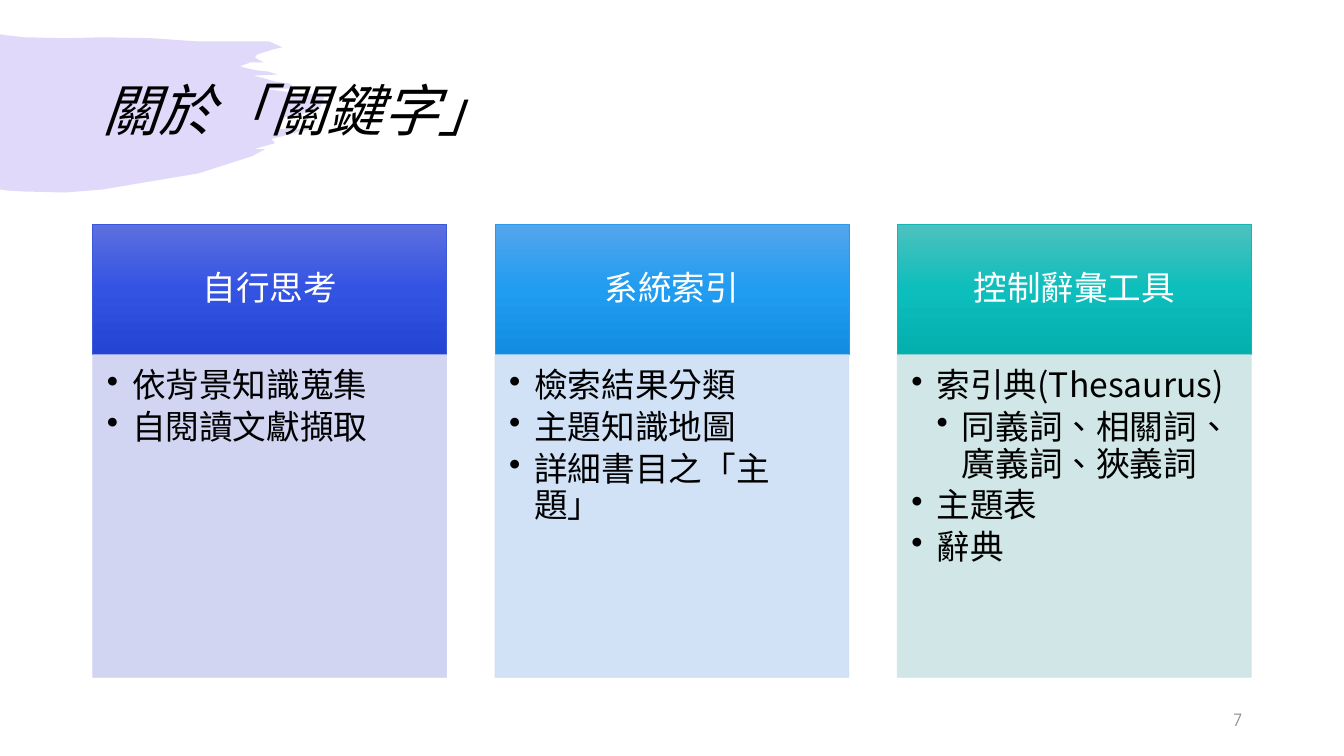
from copy import deepcopy
from dataclasses import dataclass

from lxml.etree import SubElement
from pptx import Presentation
from pptx.dml.color import RGBColor
from pptx.enum.shapes import MSO_SHAPE
from pptx.enum.text import MSO_ANCHOR, PP_ALIGN
from pptx.oxml.ns import qn
from pptx.util import Pt

PX = 9144


@dataclass(frozen=True)
class Theme:
    """Colours, fonts and type sizes of the slide."""
    body_font: str = "Noto Sans CJK SC"
    number_font: str = "TeX Gyre Adventor"
    ink: str = "000000"
    header_ink: str = "FFFFFF"
    number_ink: str = "8C8C8C"
    brush: str = "6C45EA"
    title_size: int = 40
    text_size: int = 24
    number_size: int = 12


@dataclass(frozen=True)
class Topic:
    """One column: its colours, heading and (level, text) points."""
    gradient: tuple
    edge: str
    tint: str
    heading: str
    points: tuple


THEME = Theme()
TOPICS = (
    Topic(("5C6FE0", "3353E3", "2444D3"), "3B58DB", "CED1F1", "自行思考",
          ((1, "依背景知識蒐集"), (1, "自閱讀文獻擷取"))),
    Topic(("53A5EC", "209CF0", "118CE0"), "299AE7", "CDDEF6", "系統索引",
          ((1, "檢索結果分類"), (1, "主題知識地圖"), (1, "詳細書目之「主題」"))),
    Topic(("4CC1BF", "0CBEBC", "03B0AE"), "14B6B4", "CCE5E5", "控制辭彙工具",
          ((1, "索引典(Thesaurus)"), (2, "同義詞、相關詞、廣義詞、狹義詞"),
           (1, "主題表"), (1, "辭典"))),
)
BRUSH_OUTLINE = (
    (0, 0), (6, 1), (25, 3), (66, 4), (102, 3), (151, 4), (194, 7), (248, 7),
    (267, 7), (280, 13), (271, 15), (255, 20), (253, 23), (256, 25), (262, 28),
    (248, 28), (238, 32), (246, 34), (256, 36), (266, 37), (275, 40), (251, 41),
    (263, 44), (273, 47), (280, 48), (288, 49), (290, 51), (287, 54), (284, 54),
    (263, 54), (296, 59), (330, 60), (321, 63), (318, 72), (307, 77), (300, 79),
    (283, 82), (280, 86), (278, 91), (274, 94), (308, 94), (269, 104),
    (273, 108), (252, 114), (263, 114), (250, 121), (197, 138), (102, 154),
    (65, 157), (23, 156), (7, 155), (0, 154),
)


def emu(box):
    """Turn a box in px into EMU."""
    return [length * PX for length in box]


def set_alpha(shape, percent):
    """Make the fill and line colours of a shape translucent."""
    for color in shape._element.spPr.iter(qn("a:srgbClr")):
        SubElement(color, qn("a:alpha"), val=str(percent * 1000))


def style_para(para, font, size, color, italic=None):
    """Set the type of a paragraph, for Latin and Chinese text alike."""
    para.font.name = font
    para.font.size = Pt(size)
    para.font.italic = italic
    para.font.color.rgb = RGBColor.from_string(color)
    properties = para._p.pPr.find(qn("a:defRPr"))
    properties.set("lang", "zh-TW")
    SubElement(properties, qn("a:ea"), typeface=font)


def set_frame(frame, anchor, insets=(10, 5, 10, 5)):
    """Set wrapping, anchor and insets of a text frame."""
    frame.word_wrap = True
    frame.vertical_anchor = anchor
    (frame.margin_left, frame.margin_top,
     frame.margin_right, frame.margin_bottom) = emu(insets)


def add_brush(page, box):
    """Draw the brush stroke behind the title."""
    left, top = emu(box)
    builder = page.shapes.build_freeform(*BRUSH_OUTLINE[0], scale=PX)
    builder.add_line_segments(BRUSH_OUTLINE[1:], close=True)
    brush = builder.convert_to_shape(left, top)
    brush.shadow.inherit = False
    brush.fill.solid()
    brush.fill.fore_color.rgb = RGBColor.from_string(THEME.brush)
    brush.line.fill.background()
    set_alpha(brush, 20)


def add_label(page, box, text, align, font, size, color, italic=None):
    """Write one line of text, centred vertically in its box."""
    frame = page.shapes.add_textbox(*emu(box)).text_frame
    set_frame(frame, MSO_ANCHOR.MIDDLE)
    para = frame.paragraphs[0]
    para.text = text
    para.alignment = align
    para.line_spacing = 0.9
    style_para(para, font, size, color, italic)


def add_panel(page, box, edge):
    """Add a rectangle with a thin outline."""
    panel = page.shapes.add_shape(MSO_SHAPE.RECTANGLE, *emu(box))
    panel.shadow.inherit = False
    panel.line.color.rgb = RGBColor.from_string(edge)
    panel.line.width = Pt(0.5)
    return panel


def add_header(page, box, topic):
    """Add the gradient heading of a column."""
    header = add_panel(page, box, topic.edge)
    header.fill.gradient()
    header.fill.gradient_angle = 270
    stop_list = header._element.spPr.find(".//" + qn("a:gsLst"))
    stop_list.insert(1, deepcopy(stop_list[0]))
    for index, stop in enumerate(header.fill.gradient_stops):
        stop.position = index / 2
        stop.color.rgb = RGBColor.from_string(topic.gradient[index])
    set_frame(header.text_frame, MSO_ANCHOR.MIDDLE, (19, 11, 19, 11))
    para = header.text_frame.paragraphs[0]
    para.text = topic.heading
    para.alignment = PP_ALIGN.CENTER
    para.line_spacing = 0.9
    style_para(para, THEME.body_font, THEME.text_size, THEME.header_ink)


def add_points(page, box, topic):
    """Add the tinted panel with the bulleted points of a column."""
    panel = add_panel(page, box, topic.tint)
    panel.fill.solid()
    panel.fill.fore_color.rgb = RGBColor.from_string(topic.tint)
    set_alpha(panel, 90)
    frame = panel.text_frame
    set_frame(frame, MSO_ANCHOR.TOP, (14, 14, 19, 21))
    for index, (level, text) in enumerate(topic.points):
        para = frame.add_paragraph() if index else frame.paragraphs[0]
        para.text = text
        para.level = level
        para.alignment = PP_ALIGN.LEFT
        para.line_spacing = 0.9
        para.space_after = Pt(4)
        properties = para._p.get_or_add_pPr()
        properties.set("marL", str(25 * level * PX))
        properties.set("indent", str(-25 * PX))
        SubElement(properties, qn("a:buChar"), char="•")
        style_para(para, THEME.body_font, THEME.text_size, THEME.ink)


def add_columns(page, box):
    """Lay out the topics as equal columns with even gaps."""
    left, top, width, height = box
    column_width, header_height = 351, 129
    pitch = (width - column_width) // (len(TOPICS) - 1)
    for index, topic in enumerate(TOPICS):
        x = left + index * pitch
        add_header(page, (x, top, column_width, header_height), topic)
        add_points(page, (x, top + header_height, column_width,
                          height - header_height), topic)


def main():
    """Build the slide and save it."""
    deck = Presentation()
    deck.slide_width, deck.slide_height = emu((1333, 750))
    page = deck.slides.add_slide(deck.slide_layouts[6])
    add_brush(page, (0, 34))
    add_label(page, (92, 40, 1150, 145), "關於「關鍵字」", PP_ALIGN.LEFT,
              THEME.body_font, THEME.title_size, THEME.ink, True)
    add_label(page, (942, 695, 300, 40), "7", PP_ALIGN.RIGHT,
              THEME.number_font, THEME.number_size, THEME.number_ink)
    add_columns(page, (92, 223, 1150, 449))
    deck.save("out.pptx")


if __name__ == "__main__":
    main()
